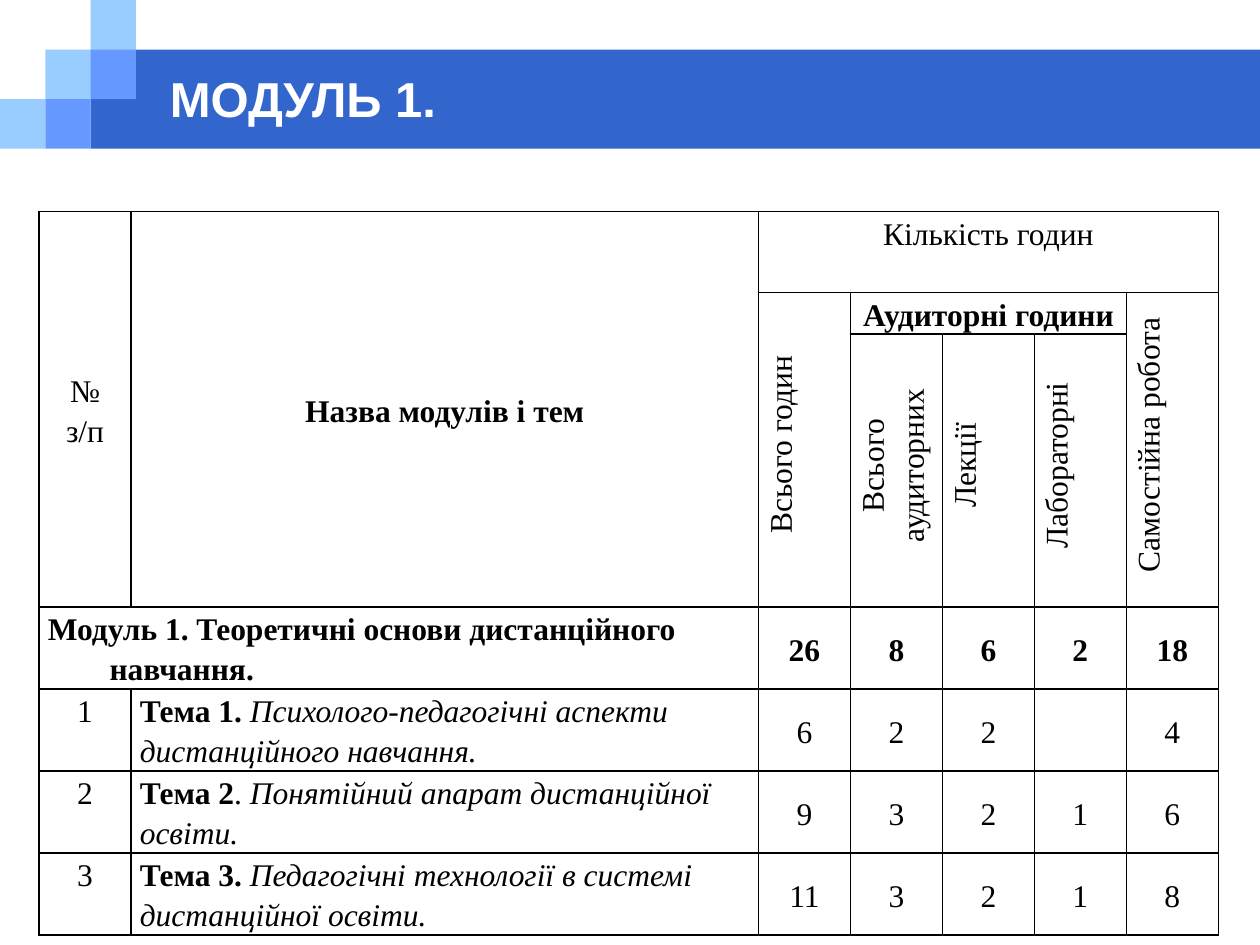
from lxml import etree
from pptx import Presentation
from pptx import util as u
from pptx.dml.color import RGBColor
from pptx.enum import shapes, text
from pptx.oxml import ns

WIDTH, HEIGHT = 10, 7.5
BLUE, LIGHT, MEDIUM = "3366CC", "99CCFF", "6699FF"
BLACK, WHITE = "000000", "FFFFFF"
MIDDLE, TOP = text.MSO_ANCHOR.MIDDLE, text.MSO_ANCHOR.TOP
CENTER, LEFT = text.PP_ALIGN.CENTER, text.PP_ALIGN.LEFT

# Column widths and row heights of the hours table
COLS = [0.73, 4.98] + [0.73] * 5
ROWS = [0.64, 0.33, 2.17] + [0.65] * 4
# Fixed line pitch, so that two lines fit in one topic row
LINE_PITCH = 22.9

# Header cells: row, column, row span, column span, words, style
HEADERS = [
    (0, 0, 3, 1, "№ з/п", {}),
    (0, 1, 3, 1, "Назва модулів і тем", {"bold": True}),
    (0, 2, 1, 5, "Кількість годин", {"anchor": TOP}),
    (1, 2, 2, 1, "Всього годин", {"upright": True}),
    (1, 3, 1, 3, "Аудиторні години", {"bold": True}),
    (1, 6, 2, 1, "Самостійна робота", {"upright": True}),
    (2, 3, 1, 1, "Всього аудиторних", {"upright": True}),
    (2, 4, 1, 1, "Лекції", {"upright": True}),
    (2, 5, 1, 1, "Лабораторні", {"upright": True}),
]
MODULE = "Модуль 1. Теоретичні основи дистанційного навчання."
MODULE_HOURS = ["26", "8", "6", "2", "18"]

# Topics: runs as (words, bold, italic), then hours
TOPICS = [
    ([("Тема 1. ", True, False),
      ("Психолого-педагогічні аспекти дистанційного навчання.", False, True)],
     ["6", "2", "2", "", "4"]),
    ([("Тема 2", True, False), (". ", False, False),
      ("Понятійний апарат дистанційної освіти.", False, True)],
     ["9", "3", "2", "1", "6"]),
    ([("Тема 3. ", True, False),
      ("Педагогічні технології в системі дистанційної освіти.", False, True)],
     ["11", "3", "2", "1", "8"]),
]


def rgb(value):
    return RGBColor.from_string(value)


def add_run(p, words, size, font, color, bold=False, italic=False):
    r = p.add_run()
    r.text = words
    f = r.font
    f.size, f.name, f.bold, f.italic = u.Pt(size), font, bold, italic
    f.color.rgb = rgb(color)


def add_block(s, x, y, w, h, color):
    sp = s.shapes.add_shape(shapes.MSO_SHAPE.RECTANGLE,
                            *(u.Inches(v) for v in (x, y, w, h)))
    sp.shadow.inherit = False
    sp.fill.solid()
    sp.fill.fore_color.rgb = rgb(color)
    sp.line.fill.background()


def add_banner(s, x, y, w, h):
    """Title band with a staircase of squares on a grid of three rows."""
    cw, ch = 0.36, h / 3
    add_block(s, x + 2 * cw, y + ch, w - 2 * cw, 2 * ch, BLUE)
    squares = [(0, 2, LIGHT), (1, 1, LIGHT), (2, 0, LIGHT),
               (2, 1, MEDIUM), (1, 2, MEDIUM)]
    for col, row, color in squares:
        add_block(s, x + col * cw, y + row * ch, cw, ch, color)

    # Title
    tb = s.shapes.add_textbox(u.Inches(x + 1.25), u.Inches(y + 0.51),
                              u.Inches(8.08), u.Inches(0.53))
    tf = tb.text_frame
    tf.word_wrap = True
    tf.vertical_anchor = MIDDLE
    add_run(tf.paragraphs[0], "МОДУЛЬ 1.", 28, "Arial", WHITE, True)


def add_borders(cell):
    tcPr = cell._tc.get_or_add_tcPr()
    for i, side in enumerate(("lnL", "lnR", "lnT", "lnB")):
        ln = etree.Element(ns.qn("a:" + side), w=str(u.Pt(1)))
        fill = etree.SubElement(ln, ns.qn("a:solidFill"))
        etree.SubElement(fill, ns.qn("a:srgbClr"), val=BLACK)
        tcPr.insert(i, ln)


def fill_cell(cell, runs, anchor=MIDDLE, align=CENTER, upright=False,
              hanging=0):
    cell.vertical_anchor = anchor
    p = cell.text_frame.paragraphs[0]
    p.alignment = align
    p.line_spacing = u.Pt(LINE_PITCH)
    pPr = p._p.get_or_add_pPr()
    if upright:
        cell._tc.get_or_add_tcPr().set("vert", "vert270")
        pPr.set("marL", str(u.Inches(0.08)))
    if hanging:
        pPr.set("marL", str(u.Inches(hanging)))
        pPr.set("indent", str(-u.Inches(hanging)))
    for words, bold, italic in runs:
        add_run(p, words, 18, "Times New Roman", BLACK, bold, italic)


def fill_hours(table, row, hours, bold=False):
    for col, value in enumerate(hours, start=2):
        if value:
            fill_cell(table.cell(row, col), [(value, bold, False)])


def add_hours_table(s, x, y):
    frame = s.shapes.add_table(len(ROWS), len(COLS), u.Inches(x), u.Inches(y),
                               u.Inches(sum(COLS)), u.Inches(sum(ROWS)))
    table = frame.table
    table.first_row = table.horz_banding = False
    for column, width in zip(table.columns, COLS):
        column.width = u.Inches(width)
    for row, height in zip(table.rows, ROWS):
        row.height = u.Inches(height)
    for cell in table.iter_cells():
        cell.margin_left = cell.margin_right = u.Inches(0.07)
        cell.margin_top = cell.margin_bottom = 0
        cell.fill.background()
        add_borders(cell)

    # Header
    for row, col, down, across, words, style in HEADERS:
        cell = table.cell(row, col)
        if down * across > 1:
            cell.merge(table.cell(row + down - 1, col + across - 1))
        layout = {k: v for k, v in style.items() if k != "bold"}
        fill_cell(cell, [(words, style.get("bold", False), False)], **layout)

    # Module
    cell = table.cell(3, 0)
    cell.merge(table.cell(3, 1))
    fill_cell(cell, [(MODULE, True, False)], TOP, LEFT, hanging=0.49)
    fill_hours(table, 3, MODULE_HOURS, bold=True)

    # Topics
    for number, (runs, hours) in enumerate(TOPICS, start=1):
        row = 3 + number
        fill_cell(table.cell(row, 0), [(str(number), False, False)], TOP)
        fill_cell(table.cell(row, 1), runs, TOP, LEFT)
        fill_hours(table, row, hours)


def main():
    prs = Presentation()
    prs.slide_width, prs.slide_height = u.Inches(WIDTH), u.Inches(HEIGHT)
    s = prs.slides.add_slide(prs.slide_layouts[6])
    add_banner(s, 0, 0, WIDTH, 1.18)
    add_hours_table(s, 0.31, 1.68)
    prs.save("out.pptx")


if __name__ == "__main__":
    main()
